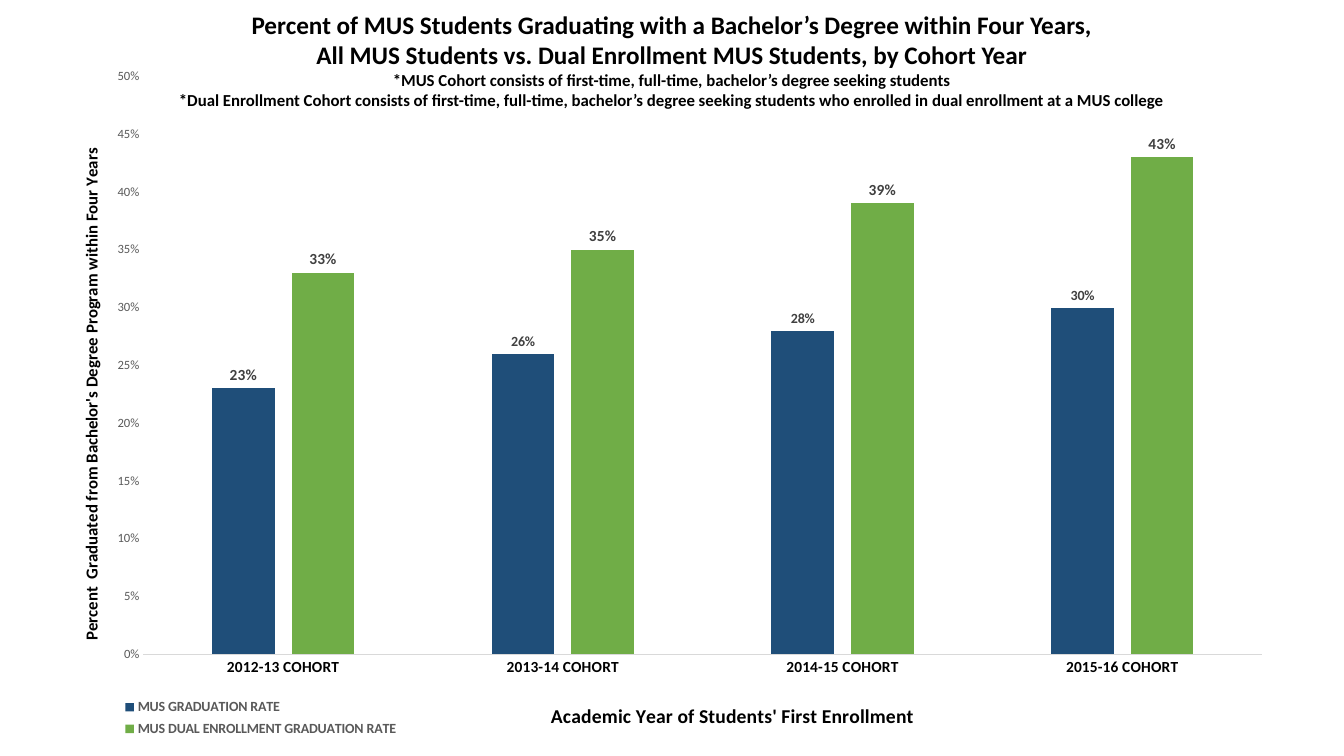
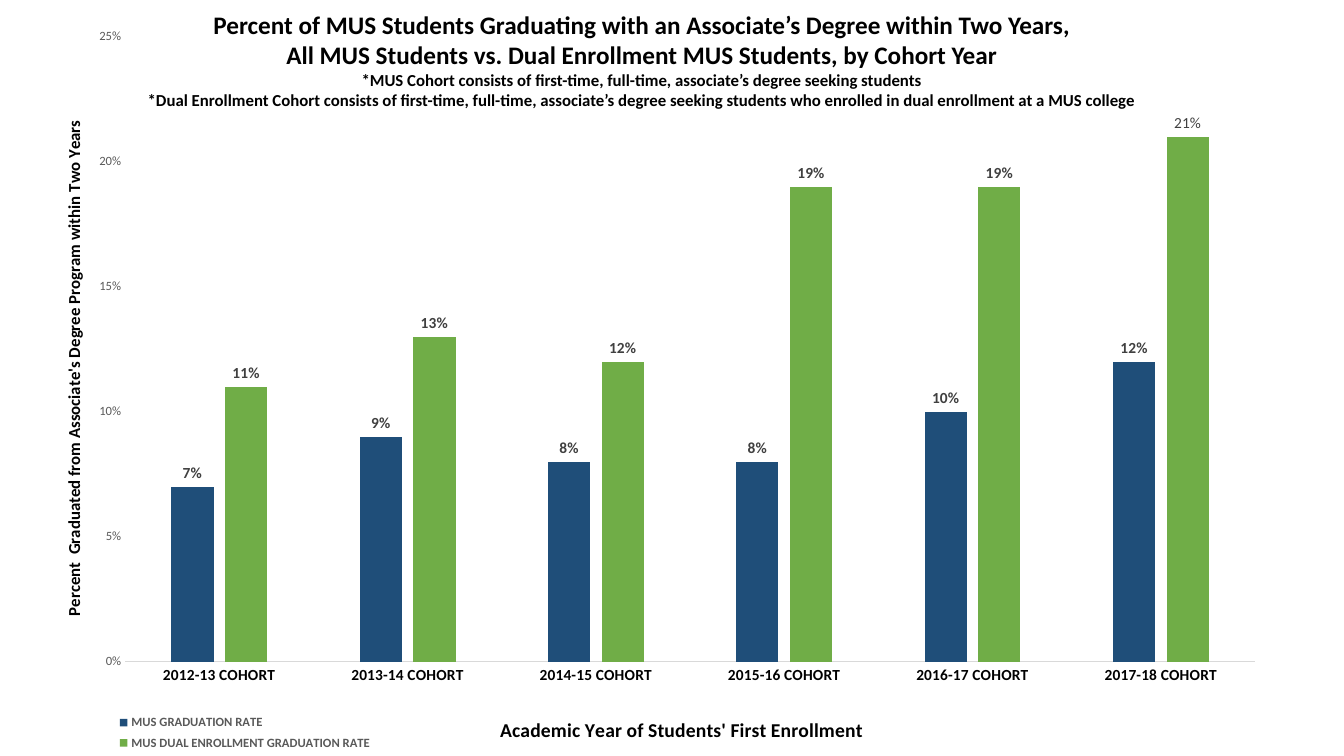
from lxml import etree
from pptx import Presentation
from pptx.chart.data import CategoryChartData
from pptx.dml.color import RGBColor
from pptx.enum.chart import XL_CHART_TYPE as ChartType
from pptx.enum.chart import XL_LABEL_POSITION as LabelPosition
from pptx.enum.chart import XL_LEGEND_POSITION as LegendPosition
from pptx.enum.chart import XL_TICK_MARK as TickMark
from pptx.enum.text import MSO_AUTO_SIZE as AutoSize
from pptx.enum.text import PP_ALIGN as Align
from pptx.oxml.ns import qn
from pptx.util import Pt

FONT = "Calibri"
BLACK, GRAY, LABEL_GRAY, AXIS_GRAY = "000000", "595959", "404040", "D9D9D9"
SERIES = [
    ("MUS GRADUATION RATE", "1F4E79"),
    ("MUS DUAL ENROLLMENT GRADUATION RATE", "70AD47"),
]
YEAR_TITLE = "Academic Year of Students' First Enrollment"
HEADING_SIZES = [18, 18, 12, 12]

# Chart and heading positions are in points; layout entries are chart fractions.
SLIDES = [
    dict(
        degree="Bachelor’s", article="a", years="Four",
        axis_title="Percent  Graduated from Bachelor's Degree Program within Four Years",
        cohorts=["2012-13", "2013-14", "2014-15", "2015-16"],
        rates=[(0.23, 0.26, 0.28, 0.30), (0.33, 0.35, 0.39, 0.43)],
        label_sizes=(10, 11), special_label=(0, 0, True),
        axis_max=0.5, legend_size=10,
        chart=(48, 29.5, 864, 501), heading_left=48,
        plot=(0.063, 0.05, 0.925, 0.824), legend=(0.03, 0.93, 0.26, 0.07),
        year_title=(0.397, 0.938), rate_title=(0.008, 0.148),
    ),
    dict(
        degree="Associate’s", article="an", years="Two",
        axis_title="Percent  Graduated from Associate's Degree Program within Two Years",
        cohorts=["2012-13", "2013-14", "2014-15", "2015-16", "2016-17", "2017-18"],
        rates=[(0.07, 0.09, 0.08, 0.08, 0.10, 0.12),
               (0.11, 0.13, 0.12, 0.19, 0.19, 0.21)],
        label_sizes=(11, 11), special_label=(1, 5, False),
        axis_max=0.25, legend_size=9,
        chart=(35.3, 6.5, 872.6, 533.5), heading_left=26.6,
        plot=(0.062, 0.037, 0.925, 0.837), legend=(0.04, 0.938, 0.24, 0.062),
        year_title=(0.366, 0.942), rate_title=(0.008, 0.145),
    ),
]


def color(value):
    return RGBColor.from_string(value)


def style_font(font, size, shade, bold=True):
    font.name, font.size, font.bold = FONT, Pt(size), bold
    font.color.rgb = color(shade)


def set_layout(element, index, fractions, inner=False):
    """Place a chart part by fractions: x, y and optionally width, height."""
    for old in element.findall(qn("c:layout")):
        element.remove(old)
    layout = etree.Element(qn("c:layout"))
    manual = etree.SubElement(layout, qn("c:manualLayout"))
    settings = [("layoutTarget", "inner")] if inner else []
    settings += [("xMode", "edge"), ("yMode", "edge")]
    settings += zip("xywh", fractions)
    for name, value in settings:
        etree.SubElement(manual, qn("c:" + name)).set("val", str(value))
    element.insert(index, layout)


def add_axis_title(axis, text, size, position, rotation=0):
    title = axis.axis_title
    frame = title.text_frame
    frame.text = text
    style_font(frame.paragraphs[0].runs[0].font, size, BLACK)
    body = title._element.find(".//" + qn("a:bodyPr"))
    body.set("rot", str(rotation * 60000))
    body.set("vert", "horz")
    set_layout(title._element, 1, position)


def style_axes(chart, content):
    years, rates = chart.category_axis, chart.value_axis
    for axis in (years, rates):
        axis.has_major_gridlines = False
        axis.major_tick_mark = axis.minor_tick_mark = TickMark.NONE
    style_font(years.tick_labels.font, 11, BLACK)
    years.format.line.color.rgb = color(AXIS_GRAY)
    years.format.line.width = Pt(0.75)
    style_font(rates.tick_labels.font, 9, GRAY, bold=False)
    rates.tick_labels.number_format = "0%"
    rates.tick_labels.number_format_is_linked = False
    rates.format.line.fill.background()
    rates.minimum_scale, rates.maximum_scale = 0, content["axis_max"]
    rates.major_unit = 0.05
    add_axis_title(years, YEAR_TITLE, 14, content["year_title"])
    add_axis_title(rates, content["axis_title"], 12, content["rate_title"], -90)


def style_series(plot, content):
    plot.gap_width, plot.overlap, plot.vary_by_categories = 219, -27, False
    for series, (_, shade), size in zip(plot.series, SERIES, content["label_sizes"]):
        series.format.fill.solid()
        series.format.fill.fore_color.rgb = color(shade)
        labels = series.data_labels
        labels.show_value = True
        labels.number_format, labels.number_format_is_linked = "0%", False
        labels.position = LabelPosition.OUTSIDE_END
        style_font(labels.font, size, LABEL_GRAY)
    series_index, point_index, bold = content["special_label"]
    label = plot.series[series_index].points[point_index].data_label
    style_font(label.font, 11, LABEL_GRAY, bold)
    label.position = LabelPosition.OUTSIDE_END


def add_rate_chart(page, content):
    data = CategoryChartData(number_format="0%")
    data.categories = [f"{cohort} COHORT" for cohort in content["cohorts"]]
    for (name, _), rates in zip(SERIES, content["rates"]):
        data.add_series(name, rates)
    place = [Pt(length) for length in content["chart"]]
    chart = page.shapes.add_chart(ChartType.COLUMN_CLUSTERED, *place, data).chart
    chart.has_title = False
    style_font(chart.font, 10, BLACK, bold=False)
    style_axes(chart, content)
    style_series(chart.plots[0], content)
    chart.has_legend = True
    legend = chart.legend
    legend.position = LegendPosition.BOTTOM
    legend.include_in_layout = False
    style_font(legend.font, content["legend_size"], GRAY)
    set_layout(legend._element, 1, content["legend"])
    plot_area = chart._chartSpace.find(".//" + qn("c:plotArea"))
    set_layout(plot_area, 0, content["plot"], inner=True)


def add_heading(page, content):
    degree = content["degree"]
    seekers = f"first-time, full-time, {degree.lower()} degree seeking students"
    lines = [
        f"Percent of MUS Students Graduating with {content['article']} {degree} "
        f"Degree within {content['years']} Years,",
        "All MUS Students vs. Dual Enrollment MUS Students, by Cohort Year",
        f"*MUS Cohort consists of {seekers}",
        f"*Dual Enrollment Cohort consists of {seekers} "
        "who enrolled in dual enrollment at a MUS college",
    ]
    box = page.shapes.add_textbox(Pt(content["heading_left"]), Pt(3), Pt(864), Pt(80))
    frame = box.text_frame
    frame.word_wrap = True
    frame.auto_size = AutoSize.SHAPE_TO_FIT_TEXT
    frame.text = "\n".join(lines)
    for para, size in zip(frame.paragraphs, HEADING_SIZES):
        para.alignment = Align.CENTER
        style_font(para.runs[0].font, size, BLACK)


def main():
    deck = Presentation()
    deck.slide_width, deck.slide_height = Pt(960), Pt(540)
    for content in SLIDES:
        page = deck.slides.add_slide(deck.slide_layouts[6])
        add_rate_chart(page, content)
        add_heading(page, content)
    deck.save("out.pptx")


if __name__ == "__main__":
    main()
